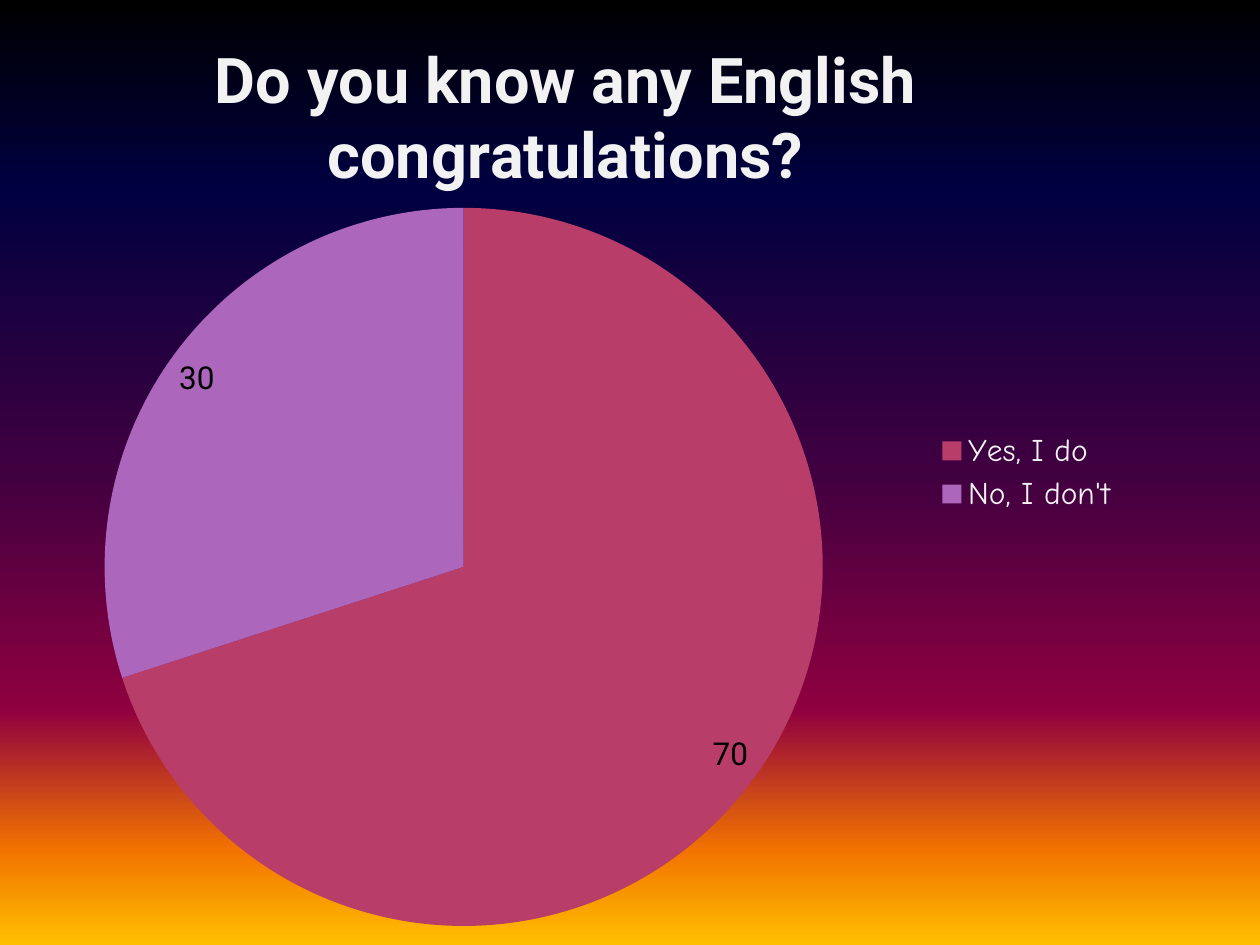
from dataclasses import dataclass

from lxml.etree import SubElement
from pptx import Presentation
from pptx.chart.data import CategoryChartData
from pptx.dml.color import RGBColor
from pptx.enum.chart import XL_CHART_TYPE, XL_LABEL_POSITION, XL_LEGEND_POSITION
from pptx.oxml import parse_xml
from pptx.oxml.ns import nsdecls, qn
from pptx.util import Cm, Pt


@dataclass(frozen=True)
class Theme:
    sky: tuple = (
        (0, "000000"), (20, "000040"), (50, "400040"),
        (75, "8F0040"), (90, "F27300"), (100, "FFBF00"),
    )
    slices: tuple = ("B83D68", "AC66BB")
    light: str = "F2F2F2"
    dark: str = "000000"
    body: str = "Roboto"
    script: str = "Comic Neue"
    head: int = 36
    text: int = 18


class Deck:
    def __init__(self, theme):
        self.theme = theme
        self.file = Presentation()
        self.file.slide_width = Cm(25.4)
        self.file.slide_height = Cm(19.05)
        self.slide = self.file.slides.add_slide(self.file.slide_layouts[6])

    def style(self, font, name, size, color, bold=False):
        font.name = name
        font.size = Pt(size)
        font.bold = bold
        font.color.rgb = RGBColor.from_string(color)

    def backdrop(self):
        self.slide.background.fill.gradient()
        fill = self.slide.element.find(".//" + qn("a:gradFill"))
        stops = fill.find(qn("a:gsLst"))
        stops.clear()
        for pos, color in self.theme.sky:
            stop = SubElement(stops, qn("a:gs"), pos=str(pos * 1000))
            SubElement(stop, qn("a:srgbClr"), val=color)
        fill.find(qn("a:lin")).set("ang", "5400000")

    def title(self, chart, text):
        chart.has_title = True
        run = chart.chart_title.text_frame.paragraphs[0].add_run()
        run.text = text
        self.style(run.font, self.theme.body, self.theme.head, self.theme.light, True)
        chart.chart_title.include_in_layout = False

    def legend(self, chart):
        chart.has_legend = True
        chart.legend.position = XL_LEGEND_POSITION.RIGHT
        chart.legend.include_in_layout = False
        self.style(chart.legend.font, self.theme.script, self.theme.text, self.theme.light)

    def place(self, chart, **box):
        area = chart.element.find(".//" + qn("c:plotArea"))
        for old in area.findall(qn("c:layout")):
            area.remove(old)
        sides = "".join(f'<c:{key} val="{val}"/>' for key, val in box.items())
        area.insert(0, parse_xml(
            f'<c:layout {nsdecls("c")}><c:manualLayout><c:layoutTarget val="inner"/>'
            f'<c:xMode val="edge"/><c:yMode val="edge"/>{sides}'
            "</c:manualLayout></c:layout>"
        ))

    def pie(self, title, name, values, left, top, width, height):
        data = CategoryChartData()
        data.categories = list(values)
        data.add_series(name, list(values.values()))
        chart = self.slide.shapes.add_chart(
            XL_CHART_TYPE.PIE, Cm(left), Cm(top), Cm(width), Cm(height), data
        ).chart
        self.style(chart.font, self.theme.body, self.theme.text, self.theme.dark)
        self.title(chart, title)
        self.legend(chart)
        plot = chart.plots[0]
        plot.vary_by_categories = True
        for i, color in enumerate(self.theme.slices):
            fill = plot.series[0].points[i].format.fill
            fill.solid()
            fill.fore_color.rgb = RGBColor.from_string(color)
        plot.has_data_labels = True
        labels = plot.data_labels
        labels.show_value = True
        labels.show_percentage = False
        labels.position = XL_LABEL_POSITION.INSIDE_END
        self.style(labels.font, self.theme.body, self.theme.text, self.theme.dark)
        self.place(chart, x=0.09, y=0.22, w=0.64, h=0.76)

    def save(self):
        self.file.save("out.pptx")


def main():
    deck = Deck(Theme())
    deck.backdrop()
    deck.pie(
        "Do you know any English congratulations?",
        "Series 1",
        {"Yes, I do": 70, "No, I don't": 30},
        0, 0, 22.8, 19.05,
    )
    deck.save()


if __name__ == "__main__":
    main()
